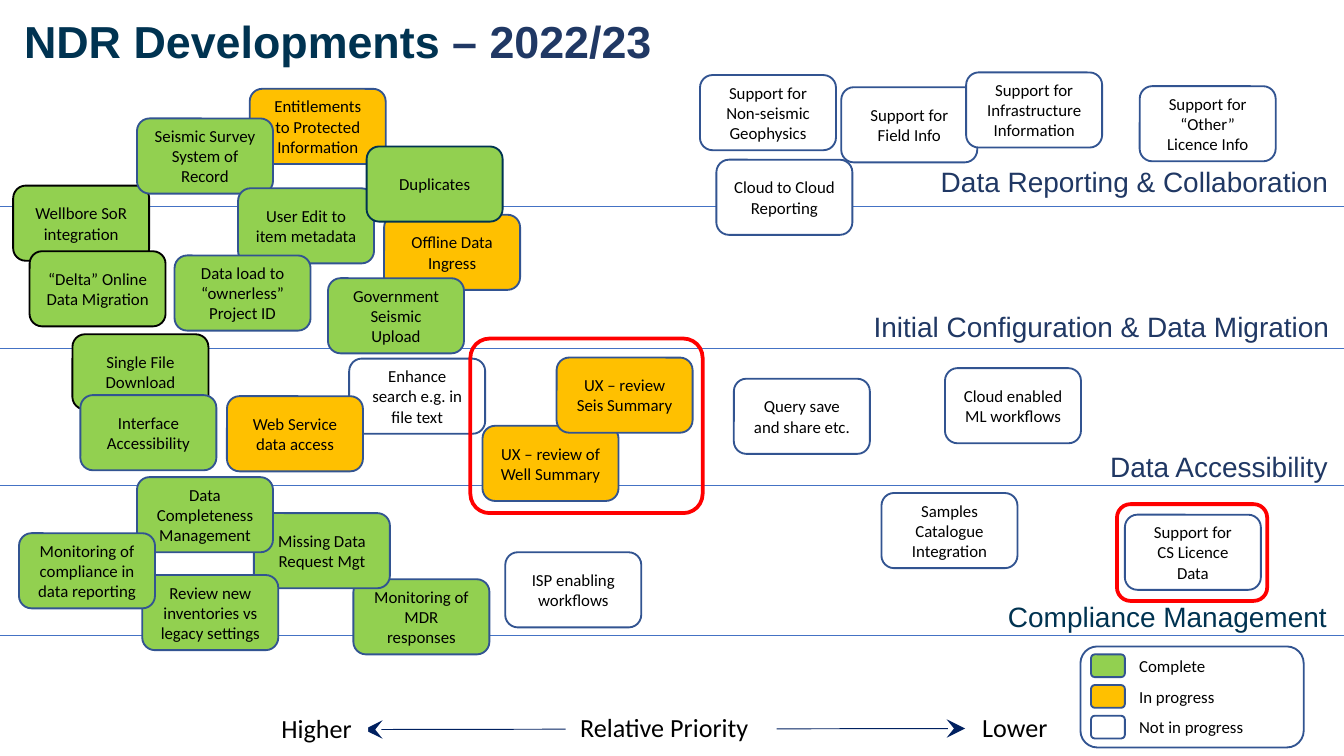
"""Build the NDR Developments roadmap slide."""
from lxml import etree
from pptx import Presentation
from pptx.dml.color import RGBColor
from pptx.enum.shapes import MSO_CONNECTOR, MSO_SHAPE
from pptx.enum.text import MSO_ANCHOR, MSO_AUTO_SIZE, PP_ALIGN
from pptx.oxml.ns import qn
from pptx.util import Cm, Pt

ROUNDED = MSO_SHAPE.ROUNDED_RECTANGLE
STRAIGHT = MSO_CONNECTOR.STRAIGHT
LEFT, CENTER = PP_ALIGN.LEFT, PP_ALIGN.CENTER
TOP, MIDDLE = MSO_ANCHOR.TOP, MSO_ANCHOR.MIDDLE
NO_FIT = MSO_AUTO_SIZE.NONE

GREEN, AMBER, WHITE, BLACK = "92D050", "FFC000", "FFFFFF", "000000"
BORDER, TEAL, NAVY, RED = "325491", "003351", "203864", "FF0000"
LANE_BLUE, ARROW_BLUE = "4472C4", "002060"

WIDTH, HEIGHT = 25.4, 14.29
CARD_SIZE = (2.57, 1.42)

TITLE = [("NDR Developments ", TEAL), ("– 2022/23", NAVY)]

# line height, label, label left, label top, label width, colour
LANES = [
    (3.91, "Data Reporting & Collaboration", 17.6, 3.12, 7.9, NAVY),
    (6.58, "Initial Configuration & Data Migration", 16.33, 5.87, 9.12, NAVY),
    (9.17, "Data Accessibility", 20.8, 8.51, 4.65, NAVY),
    (12.01, "Compliance Management", 18.87, 11.35, 6.53, TEAL),
]

CARDS = [
    ("Wellbore SoR integration", 0.25, 3.51, GREEN, BLACK),
    ("“Delta” Online Data Migration", 0.56, 4.75, GREEN, BLACK),
    ("Offline Data Ingress", 7.26, 4.06, AMBER, BORDER),
    ("Government Seismic Upload", 6.2, 5.26, GREEN, BORDER),
    ("Enhance search e.g. in file text", 6.6, 6.78, WHITE, BORDER),
    ("Query save and share etc.", 13.87, 7.16, WHITE, BORDER),
    ("Web Service data access", 4.29, 7.49, AMBER, BORDER),
    ("Monitoring of MDR responses", 6.68, 10.95, GREEN, BORDER),
    ("Missing Data Request Mgt", 4.8, 9.7, GREEN, BORDER),
    ("Review new inventories vs legacy settings", 2.69, 10.87, GREEN, BORDER),
    ("Cloud enabled ML workflows", 17.86, 6.96, WHITE, BORDER),
    ("ISP enabling workflows", 9.55, 10.44, WHITE, BORDER),
    ("Support for\nCS Licence Data", 21.26, 9.73, WHITE, BORDER),
    ("UX – review of\nWell Summary", 9.12, 8.05, AMBER, BORDER),
    ("UX – review\nSeis Summary", 10.52, 6.76, AMBER, BORDER),
    ("Support for\nNon-seismic Geophysics", 13.23, 1.42, WHITE, BORDER),
    ("Support for\n“Other”\nLicence Info", 21.54, 1.63, WHITE, BORDER),
    ("Support for\nField Info", 15.9, 1.65, WHITE, BORDER),
    ("Support for\nInfrastructure Information", 18.26, 1.37, WHITE, BORDER),
    ("Cloud to Cloud Reporting", 13.54, 3.02, WHITE, BORDER),
    ("Entitlements to Protected Information", 4.72, 1.68, AMBER, BORDER),
    ("Data Completeness Management", 2.59, 9.02, GREEN, BORDER),
    ("Samples Catalogue Integration", 16.66, 9.32, WHITE, BORDER),
    ("Seismic Survey System of Record", 2.59, 2.24, GREEN, BORDER),
    ("Monitoring of compliance in data reporting", 0.36, 10.08, GREEN, BORDER),
    ("Single File Download", 1.37, 6.32, GREEN, BLACK),
    ("User Edit to item metadata", 4.5, 3.56, GREEN, BORDER),
    ("Data load to “ownerless” Project ID", 3.3, 4.83, GREEN, BORDER),
    ("Interface Accessibility", 1.52, 7.47, GREEN, BORDER),
    ("Duplicates", 6.93, 2.77, GREEN, TEAL),
]

LEGEND = [("Complete", GREEN), ("In progress", AMBER), ("Not in progress", WHITE)]
LEGEND_PANEL = (20.42, 12.22, 4.22, 1.91)
LEGEND_LEFT, LEGEND_TOP, LEGEND_STEP = 20.62, 12.37, 0.58
SWATCH_SIZE = (0.64, 0.43)

PRIORITY_ARROW = (18.24, 13.77, 6.88, 13.79)
PRIORITY_LABELS = [
    ("Higher", (5.05, 13.59, 1.91, 0.36)),
    ("Relative Priority", (10.69, 13.51, 3.99, 0.48)),
    ("Lower", (18.29, 13.51, 1.8, 0.46)),
]

# place, corner ratio
HIGHLIGHTS = [((8.89, 6.4, 4.39, 3.3), 0.11), ((21.11, 9.53, 2.84, 1.83), 0.14)]


def color(value):
    """Turn a hex string into a colour."""
    return RGBColor.from_string(value)


def lengths(*values):
    """Turn numbers into centimetre lengths."""
    return [Cm(value) for value in values]


def write(paragraph, text, size, ink, font, bold=False):
    """Add one formatted run to a paragraph."""
    span = paragraph.add_run()
    span.text = text
    span.font.name, span.font.size, span.font.bold = font, Pt(size), bold
    span.font.color.rgb = color(ink)


def add_box(slide, place, fill=None, line=None, weight=1, text="", size=9, align=LEFT):
    """Add a rounded box with optional fill, outline and text."""
    box = slide.shapes.add_shape(ROUNDED, *lengths(*place))
    box.shadow.inherit = False
    if fill:
        box.fill.solid()
        box.fill.fore_color.rgb = color(fill)
    else:
        box.fill.background()
    if line:
        box.line.color.rgb = color(line)
        box.line.width = Pt(weight)
    else:
        box.line.fill.background()
    frame = box.text_frame
    frame.word_wrap, frame.vertical_anchor = True, MIDDLE
    if text:
        for index, part in enumerate(text.split("\n")):
            paragraph = frame.add_paragraph() if index else frame.paragraphs[0]
            paragraph.alignment = align
            write(paragraph, part, size, BLACK, "Calibri")
    return box


def add_line(slide, ends, ink, arrows=False):
    """Add a thin straight line, with arrowheads at both ends if asked."""
    line = slide.shapes.add_connector(STRAIGHT, *lengths(*ends))
    line.line.color.rgb = color(ink)
    line.line.width = Pt(0.5)
    properties = line.element.spPr
    if arrows:
        outline = properties.find(qn("a:ln"))
        for end in ("a:headEnd", "a:tailEnd"):
            etree.SubElement(outline, qn(end), type="stealth", w="lg", len="lg")
    etree.SubElement(properties, qn("a:effectLst"))


def add_title(slide):
    """Place and fill the title placeholder."""
    title = slide.shapes.title
    title.left, title.top, title.width, title.height = lengths(0.2, 0.25, 22.96, 0.94)
    frame = title.text_frame
    frame.auto_size, frame.vertical_anchor = NO_FIT, TOP
    paragraph = frame.paragraphs[0]
    paragraph.alignment, paragraph.line_spacing = LEFT, 0.9
    for text, ink in TITLE:
        write(paragraph, text, 24, ink, "Arial", bold=True)


def add_lane_label(slide, text, left, top, width, ink):
    """Add the name of a lane above its line."""
    box = slide.shapes.add_textbox(*lengths(left, top, width, 0.69))
    frame = box.text_frame
    frame.vertical_anchor, frame.word_wrap = MIDDLE, False
    frame.margin_left = frame.margin_right = Cm(0.18)
    frame.margin_top = frame.margin_bottom = Cm(0.1)
    paragraph = frame.paragraphs[0]
    paragraph.alignment, paragraph.line_spacing = LEFT, 0.9
    write(paragraph, text, 15, ink, "Arial")


def add_legend(slide):
    """Add the status legend."""
    add_box(slide, LEGEND_PANEL, WHITE, BORDER)
    width, height = SWATCH_SIZE
    for index, (text, fill) in enumerate(LEGEND):
        top = LEGEND_TOP + index * LEGEND_STEP
        add_box(slide, (LEGEND_LEFT + width, top, 3, height), WHITE, text=text)
        add_box(slide, (LEGEND_LEFT, top, width, height), fill, BORDER)


def main():
    """Build and save the deck."""
    deck = Presentation()
    deck.slide_width, deck.slide_height = lengths(WIDTH, HEIGHT)
    slide = deck.slides.add_slide(deck.slide_layouts[5])
    add_title(slide)
    for height, *_ in LANES:
        add_line(slide, (WIDTH, height, 0, height), LANE_BLUE)
    for text, left, top, fill, line in CARDS:
        add_box(slide, (left, top, *CARD_SIZE), fill, line, text=text, align=CENTER)
    for _, *label in LANES:
        add_lane_label(slide, *label)
    add_legend(slide)
    add_line(slide, PRIORITY_ARROW, ARROW_BLUE, arrows=True)
    for text, place in PRIORITY_LABELS:
        add_box(slide, place, WHITE, text=text, size=14)
    for place, corner in HIGHLIGHTS:
        add_box(slide, place, line=RED, weight=2).adjustments[0] = corner
    deck.save("out.pptx")


if __name__ == "__main__":
    main()
